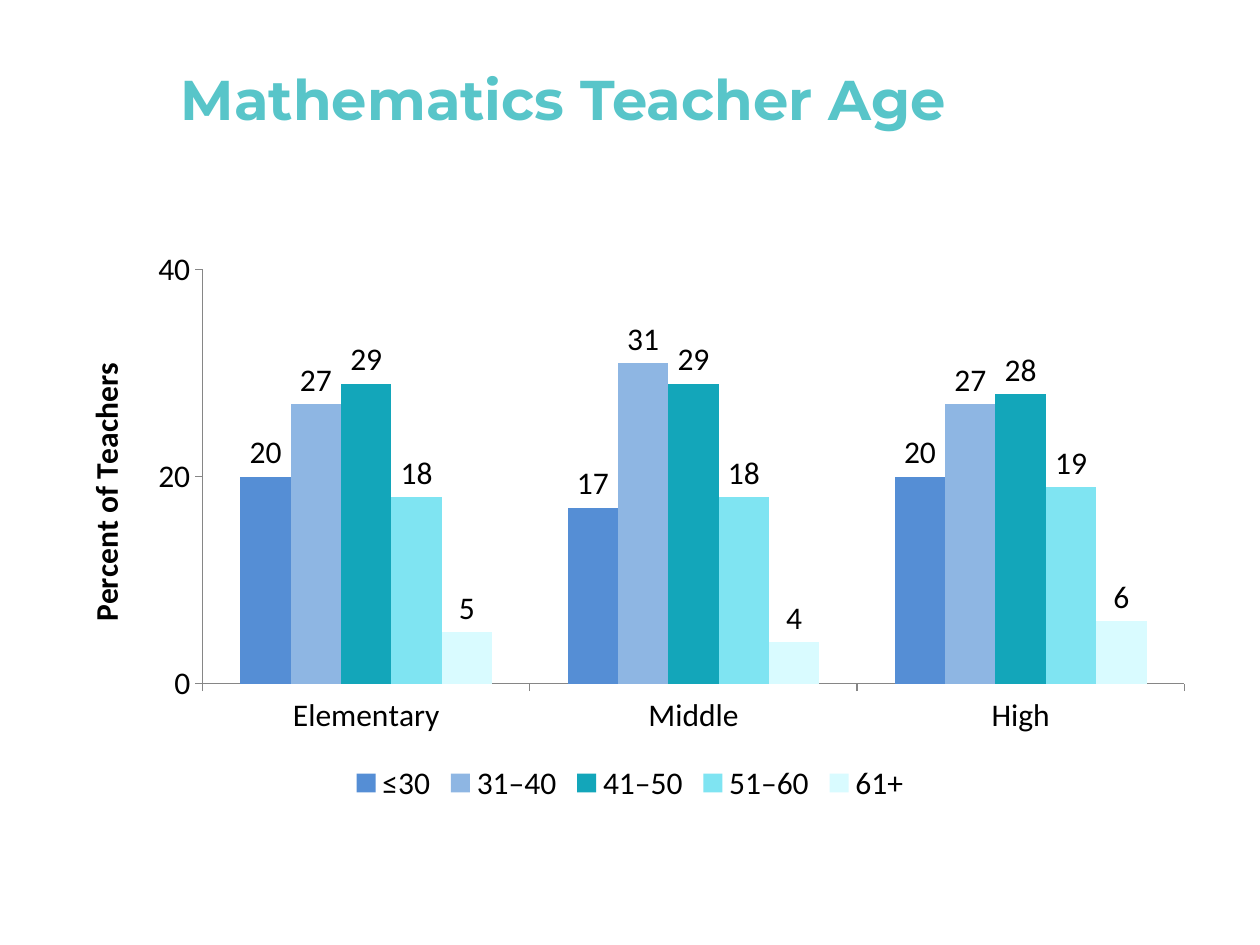
"""Build the Mathematics Teacher Age slide with a clustered column chart."""
from dataclasses import dataclass

from lxml.etree import SubElement
from pptx import Presentation
from pptx.chart.axis import _BaseAxis as Axis
from pptx.chart.chart import Chart
from pptx.chart.data import CategoryChartData as ChartData
from pptx.chart.series import BarSeries
from pptx.dml.color import RGBColor as RGB
from pptx.enum.chart import (
    XL_CHART_TYPE as ChartType,
    XL_LABEL_POSITION as LabelPos,
    XL_LEGEND_POSITION as LegendPos,
    XL_TICK_MARK as Tick,
)
from pptx.enum.text import MSO_ANCHOR as Anchor, PP_ALIGN as Align
from pptx.oxml.ns import qn
from pptx.slide import Slide
from pptx.util import Pt


@dataclass(frozen=True)
class Theme:
    title_font: str = "Montserrat"
    body_font: str = "Calibri"
    title_size: int = 32
    body_size: int = 18
    title: RGB = RGB(0x58, 0xC5, 0xC9)
    text: RGB = RGB(0, 0, 0)
    axis: RGB = RGB(0x86, 0x86, 0x86)


@dataclass(frozen=True)
class AgeGroup:
    name: str
    percents: tuple[int, ...]
    color: str


@dataclass(frozen=True)
class Box:
    left: float
    top: float
    width: float
    height: float


THEME = Theme()
TITLE_BOX = Box(96, 21.6, 588, 68.4)
CHART_BOX = Box(30, 138, 660, 324)
PLOT_SHARE = {"x": 0.13, "y": 0.05, "w": 0.85, "h": 0.73}
SCHOOLS = ("Elementary", "Middle", "High")
AGE_GROUPS = (
    AgeGroup("≤30", (20, 17, 20), "558ED5"),
    AgeGroup("31–40", (27, 31, 27), "8EB6E3"),
    AgeGroup("41–50", (29, 29, 28), "13A6BA"),
    AgeGroup("51–60", (18, 18, 19), "7FE4F2"),
    AgeGroup("61+", (5, 4, 6), "D9FBFF"),
)


def add_title(s: Slide, text: str) -> None:
    sp = s.shapes.title
    sp.left, sp.top = Pt(TITLE_BOX.left), Pt(TITLE_BOX.top)
    sp.width, sp.height = Pt(TITLE_BOX.width), Pt(TITLE_BOX.height)
    tf = sp.text_frame
    tf.vertical_anchor = Anchor.MIDDLE
    p = tf.paragraphs[0]
    p.alignment = Align.LEFT
    r = p.add_run()
    r.text = text
    r.font.name, r.font.size = THEME.title_font, Pt(THEME.title_size)
    r.font.bold = True
    r.font.color.rgb = THEME.title


def style_axis(axis: Axis) -> None:
    axis.has_major_gridlines = False
    axis.major_tick_mark, axis.minor_tick_mark = Tick.OUTSIDE, Tick.NONE
    axis.format.line.color.rgb = THEME.axis
    axis.format.line.width = Pt(0.75)


def style_series(series: BarSeries, group: AgeGroup) -> None:
    series.format.fill.solid()
    series.format.fill.fore_color.rgb = RGB.from_string(group.color)
    series.invert_if_negative = False
    labels = series.data_labels
    labels.show_value = True
    labels.position = LabelPos.OUTSIDE_END


def place_plot(chart: Chart) -> None:
    area = chart.element.find(".//" + qn("c:plotArea"))
    layout = area.find(qn("c:layout"))
    if layout is None:
        layout = SubElement(area, qn("c:layout"))
        area.insert(0, layout)
    manual = SubElement(layout, qn("c:manualLayout"))
    settings = {"layoutTarget": "inner", "xMode": "edge", "yMode": "edge", **PLOT_SHARE}
    for tag, value in settings.items():
        SubElement(manual, qn(f"c:{tag}")).set("val", str(value))


def add_age_chart(s: Slide) -> None:
    data = ChartData(number_format="0")
    data.categories = SCHOOLS
    for group in AGE_GROUPS:
        data.add_series(group.name, group.percents)
    box = (Pt(CHART_BOX.left), Pt(CHART_BOX.top), Pt(CHART_BOX.width), Pt(CHART_BOX.height))
    chart = s.shapes.add_chart(ChartType.COLUMN_CLUSTERED, *box, data).chart
    chart.has_title = False
    chart.font.name, chart.font.size = THEME.body_font, Pt(THEME.body_size)
    chart.font.color.rgb = THEME.text
    chart.has_legend = True
    chart.legend.position = LegendPos.BOTTOM
    chart.legend.include_in_layout = False

    plot = chart.plots[0]
    plot.gap_width, plot.overlap = 150, 0
    plot.vary_by_categories = False
    for series, group in zip(plot.series, AGE_GROUPS):
        style_series(series, group)

    style_axis(chart.category_axis)
    values = chart.value_axis
    style_axis(values)
    values.minimum_scale, values.maximum_scale, values.major_unit = 0, 40, 20
    r = values.axis_title.text_frame.paragraphs[0].add_run()
    r.text = "Percent of Teachers"
    r.font.name, r.font.size = THEME.body_font, Pt(THEME.body_size)
    r.font.bold = True
    r.font.color.rgb = THEME.text
    place_plot(chart)


def main() -> None:
    prs = Presentation()
    prs.slide_width, prs.slide_height = Pt(720), Pt(540)
    s = prs.slides.add_slide(prs.slide_layouts[5])
    add_age_chart(s)
    add_title(s, "Mathematics Teacher Age")
    prs.save("out.pptx")


if __name__ == "__main__":
    main()
